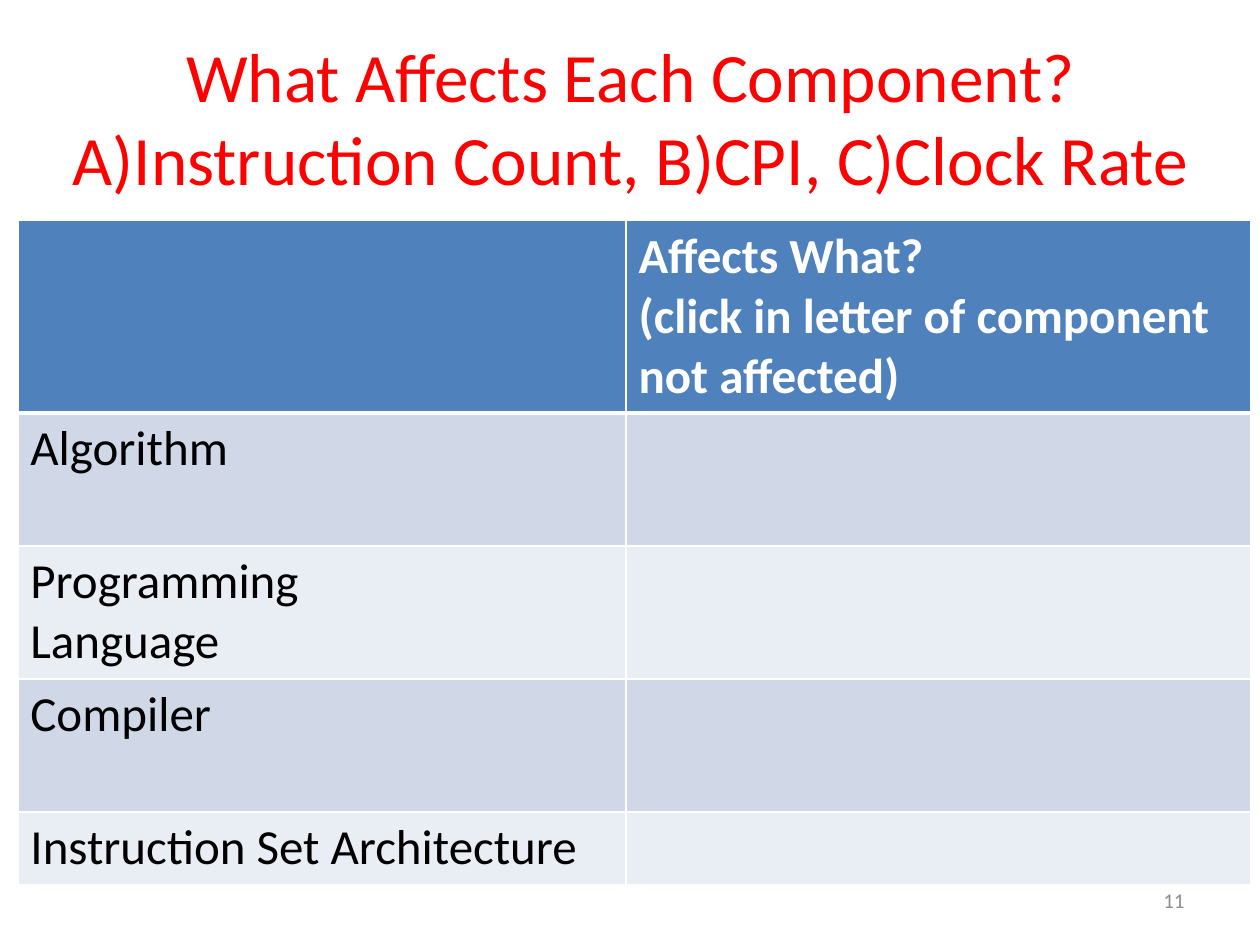
from dataclasses import dataclass

from lxml.etree import SubElement
from pptx import Presentation
from pptx.dml.color import RGBColor as Rgb
from pptx.enum.text import MSO_ANCHOR as Anchor, MSO_AUTO_SIZE as AutoSize, PP_ALIGN as Align
from pptx.oxml.ns import qn
from pptx.util import Cm, Pt


@dataclass(frozen=True)
class Theme:
    """Colours and type sizes of the deck."""
    font: str = "Calibri"
    title_color: str = "FF0000"
    header_fill: str = "4F81BD"
    header_text: str = "FFFFFF"
    bands: tuple = ("D0D8E8", "E9EDF4")
    body_text: str = "000000"
    border: str = "FFFFFF"
    muted: str = "8C8C8C"
    title_size: float = 39.6
    table_size: float = 28
    number_size: float = 12
    border_width: float = 1
    header_rule: float = 3


class SlideBuilder:
    """Holds the theme and the current slide."""

    def __init__(self, slide, theme):
        """Keep the slide and its theme."""
        self.slide = slide
        self.theme = theme

    def add_text(self, frame, paragraphs, size, color, bold=False, align=Align.LEFT):
        """Fill a text frame with paragraphs whose lines are separate runs."""
        for index, text in enumerate(paragraphs):
            paragraph = frame.add_paragraph() if index else frame.paragraphs[0]
            paragraph.alignment = align
            for number, line in enumerate(text.split("\n")):
                if number:
                    paragraph.add_line_break()
                run = paragraph.add_run()
                run.text = line
                run.font.name = self.theme.font
                run.font.size = Pt(size)
                run.font.bold = bold
                run.font.color.rgb = Rgb.from_string(color)

    def title(self, text, left, top, width, height):
        """Place and format the title placeholder."""
        heading = self.slide.shapes.title
        heading.left, heading.top = Cm(left), Cm(top)
        heading.width, heading.height = Cm(width), Cm(height)
        frame = heading.text_frame
        frame.word_wrap = True
        frame.auto_size = AutoSize.NONE
        frame.vertical_anchor = Anchor.MIDDLE
        self.add_text(frame, [text], self.theme.title_size, self.theme.title_color,
                      align=Align.CENTER)

    def border(self, cell, side, width):
        """Draw one side of a cell."""
        line = SubElement(cell._tc.get_or_add_tcPr(), qn(f"a:ln{side}"), w=str(Pt(width)))
        fill = SubElement(line, qn("a:solidFill"))
        SubElement(fill, qn("a:srgbClr"), val=self.theme.border)

    def table(self, rows, left, top, widths, heights):
        """Add a table with a header row and alternating bands."""
        theme = self.theme
        grid = self.slide.shapes.add_table(
            len(rows), len(widths), Cm(left), Cm(top), Cm(sum(widths)), Cm(sum(heights))).table
        for column, width in zip(grid.columns, widths):
            column.width = Cm(width)
        for r, (contents, height) in enumerate(zip(rows, heights)):
            grid.rows[r].height = Cm(height)
            header = r == 0
            fill = theme.header_fill if header else theme.bands[(r - 1) % 2]
            color = theme.header_text if header else theme.body_text
            for c, paragraphs in enumerate(contents):
                cell = grid.cell(r, c)
                for side in "LRTB":
                    thick = (side == "B" and r == 0) or (side == "T" and r == 1)
                    self.border(cell, side, theme.header_rule if thick else theme.border_width)
                cell.fill.solid()
                cell.fill.fore_color.rgb = Rgb.from_string(fill)
                self.add_text(cell.text_frame, paragraphs, theme.table_size, color, header)

    def page_number(self, text, left, top, width, height):
        """Add the page number at the right."""
        frame = self.slide.shapes.add_textbox(
            Cm(left), Cm(top), Cm(width), Cm(height)).text_frame
        frame.word_wrap = True
        frame.vertical_anchor = Anchor.MIDDLE
        self.add_text(frame, [text], self.theme.number_size, self.theme.muted,
                      align=Align.RIGHT)


def main():
    """Build and save the slide."""
    deck = Presentation()
    deck.slide_width, deck.slide_height = Cm(25.4), Cm(19.05)
    builder = SlideBuilder(deck.slides.add_slide(deck.slide_layouts[5]), Theme())
    builder.title("What Affects Each Component? A)Instruction Count, B)CPI, C)Clock Rate",
                  0.79, 0.76, 23.85, 3.18)
    factors = ["Algorithm", "Programming \nLanguage", "Compiler", "Instruction Set Architecture"]
    header = [[], ["Affects What?", "(click in letter of component not affected)"]]
    rows = [header] + [[[factor], []] for factor in factors]
    builder.table(rows, 0.36, 4.45, [12.26, 12.6], [3.85, 2.68, 2.68, 2.68, 1.45])
    builder.page_number("11", 18.2, 17.65, 5.93, 1.01)
    deck.save("out.pptx")


if __name__ == "__main__":
    main()
